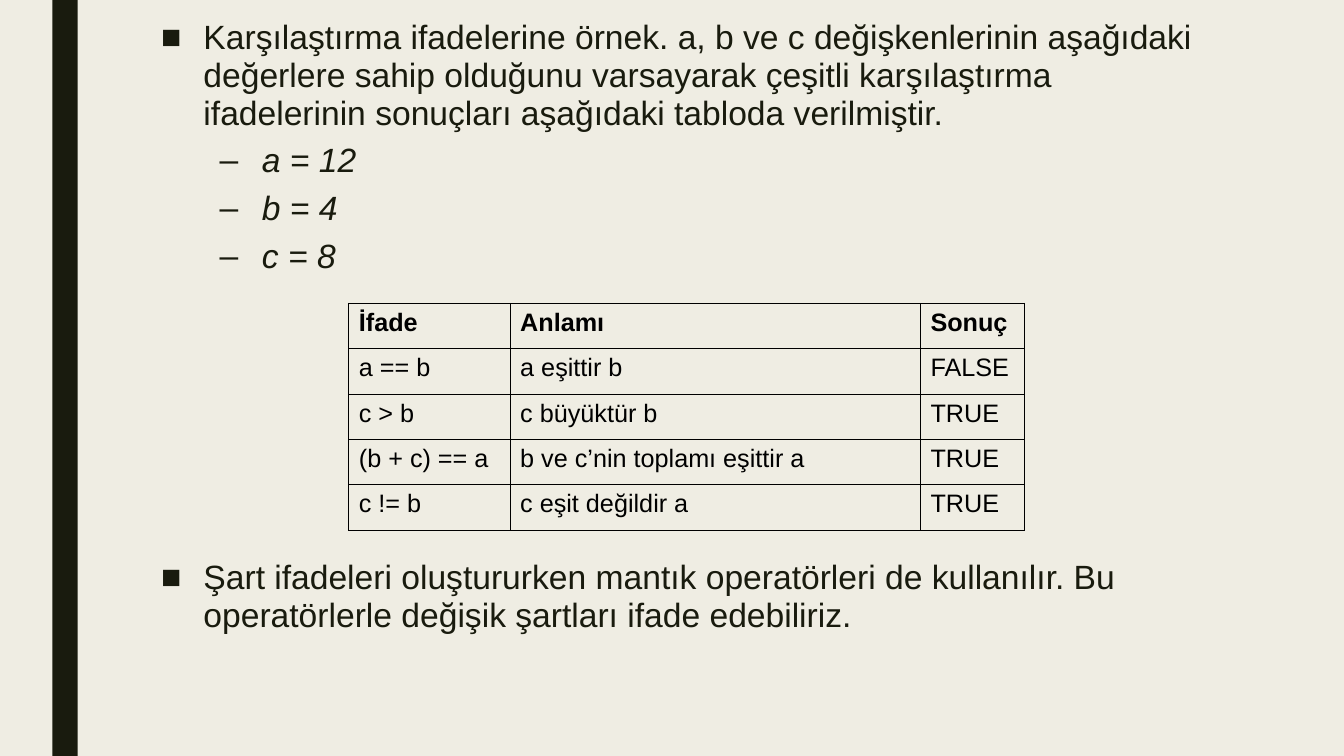
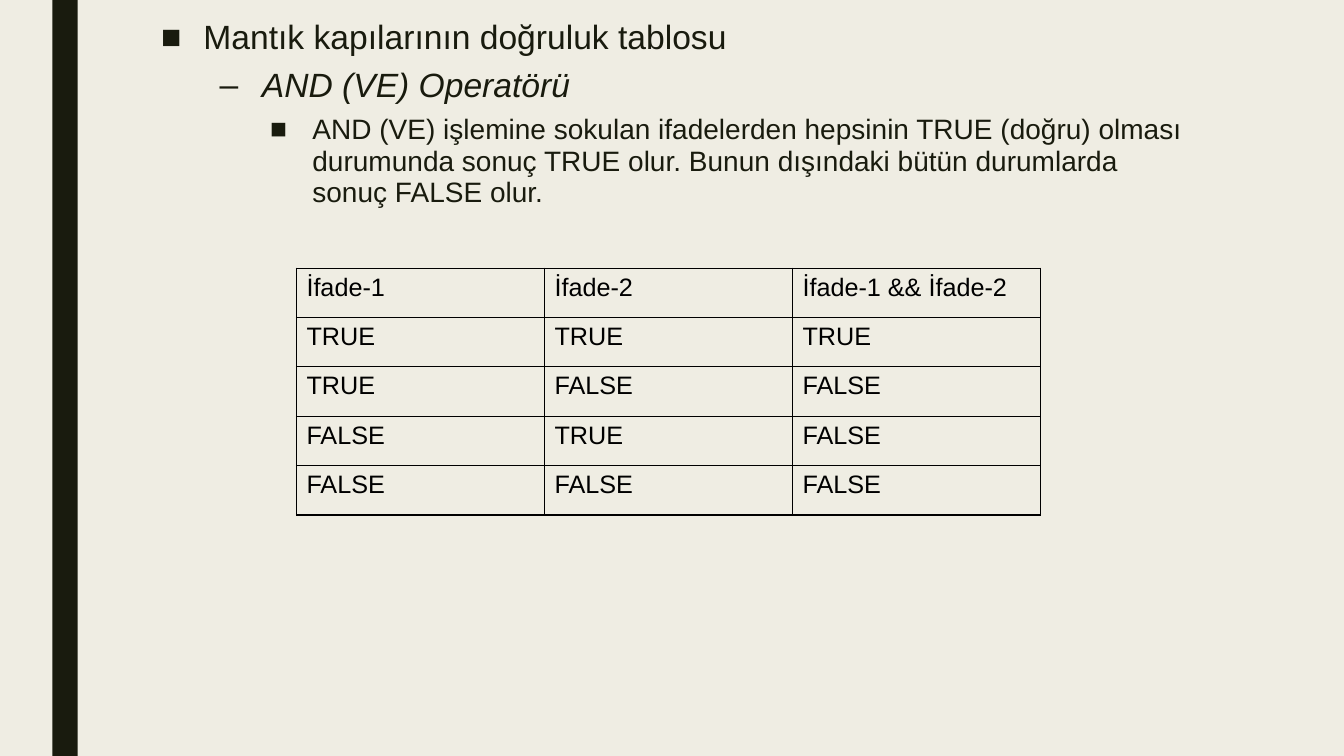
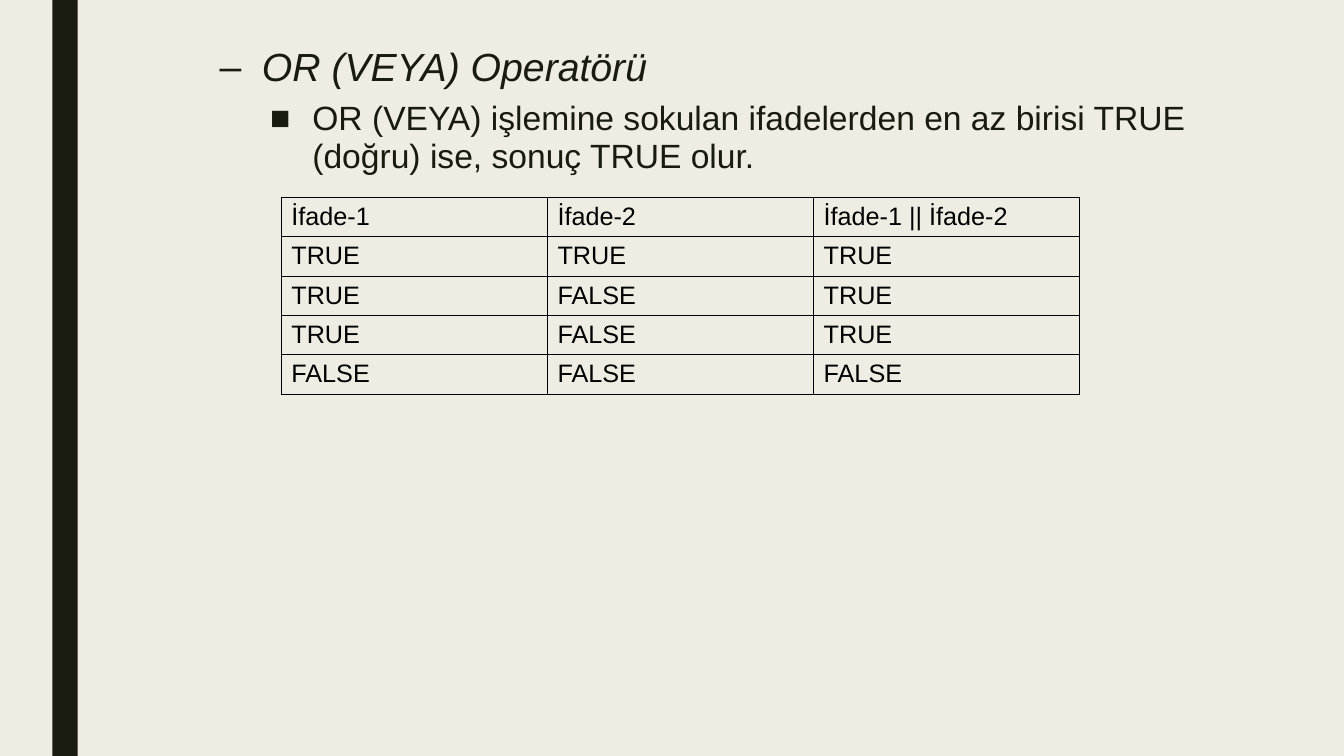
import pptx
import pptx.dml.color
import pptx.enum.shapes
import pptx.oxml
import pptx.oxml.ns
import pptx.util
from pptx.util import Inches

INK = "191B0E"
PAPER = "EFEDE3"
BLACK = "000000"
FONT = "Arial"
LEVELS = [(0.42, 10, "■", False), (1, 5, "–", True), (1.5, 5, "■", False)]


def rgb(value):
    return pptx.dml.color.RGBColor.from_string(value)


def element(xml):
    return pptx.oxml.parse_xml(xml.replace(" ", " " + pptx.oxml.ns.nsdecls("a") + " ", 1))


class Deck:
    def __init__(self):
        self.prs = pptx.Presentation()
        self.prs.slide_width = Inches(13.33)
        self.prs.slide_height = Inches(7.5)
        fill = self.prs.slide_master.background.fill
        fill.solid()
        fill.fore_color.rgb = rgb(PAPER)

    def slide(self):
        self.s = self.prs.slides.add_slide(self.prs.slide_layouts[6])
        band = self.s.shapes.add_shape(
            pptx.enum.shapes.MSO_SHAPE.RECTANGLE,
            Inches(0.52), 0, Inches(0.25), self.prs.slide_height)
        band.shadow.inherit = False
        band.fill.solid()
        band.fill.fore_color.rgb = rgb(INK)
        band.line.fill.background()

    def run(self, p, text, size, color, bold=False, italic=False):
        r = p.add_run()
        r.text = text
        r.font.name = FONT
        r.font.size = pptx.util.Pt(size)
        r.font.color.rgb = rgb(color)
        r.font.bold = bold
        r.font.italic = italic

    def bullets(self, top, height, items):
        sp = self.s.shapes.add_textbox(Inches(1.5), Inches(top), Inches(10.5), Inches(height))
        tf = sp.text_frame
        tf.word_wrap = True
        for i, (level, size, text) in enumerate(items):
            p = tf.add_paragraph() if i else tf.paragraphs[0]
            indent, before, mark, italic = LEVELS[level]
            p.level = level
            p.line_spacing = 0.94
            p.space_before = pptx.util.Pt(before)
            p.space_after = pptx.util.Pt(2)
            pPr = p._p.get_or_add_pPr()
            pPr.set("marL", str(Inches(indent)))
            pPr.set("indent", str(Inches(-0.42)))
            pPr.append(element(f'<a:buFont typeface="{FONT}"/>'))
            pPr.append(element(f'<a:buChar char="{mark}"/>'))
            self.run(p, text, size, INK, italic=italic)

    def border(self, cell):
        tcPr = cell._tc.get_or_add_tcPr()
        for i, side in enumerate("LRTB"):
            tcPr.insert(i, element(
                f'<a:ln{side} w="12700"><a:solidFill><a:srgbClr val="{BLACK}"/>'
                f'</a:solidFill></a:ln{side}>'))

    def table(self, left, top, widths, row_height, rows, bold_header=False):
        table = self.s.shapes.add_table(
            len(rows), len(widths), Inches(left), Inches(top),
            Inches(sum(widths)), Inches(row_height * len(rows))).table
        table.first_row = False
        table.horz_banding = False
        for column, width in zip(table.columns, widths):
            column.width = Inches(width)
        for i, row in enumerate(rows):
            table.rows[i].height = Inches(row_height)
            for j, text in enumerate(row):
                cell = table.cell(i, j)
                cell.margin_bottom = Inches(0.04)
                cell.fill.background()
                self.border(cell)
                self.run(cell.text_frame.paragraphs[0], text, 18, BLACK,
                         bold=bold_header and i == 0)


def main():
    deck = Deck()

    deck.slide()
    deck.bullets(0.14, 2.7, [
        (0, 24, "Karşılaştırma ifadelerine örnek. a, b ve c değişkenlerinin aşağıdaki "
                "değerlere sahip olduğunu varsayarak çeşitli karşılaştırma ifadelerinin "
                "sonuçları aşağıdaki tabloda verilmiştir."),
        (1, 24, "a = 12"),
        (1, 24, "b = 4"),
        (1, 24, "c = 8"),
    ])
    deck.table(3.46, 3.01, [1.6, 4.07, 1.03], 0.45, [
        ("İfade", "Anlamı", "Sonuç"),
        ("a == b", "a eşittir b", "FALSE"),
        ("c > b", "c büyüktür b", "TRUE"),
        ("(b + c) == a", "b ve c’nin toplamı eşittir a", "TRUE"),
        ("c != b", "c eşit değildir a", "TRUE"),
    ], bold_header=True)
    deck.bullets(5.5, 0.9, [
        (0, 24, "Şart ifadeleri oluştururken mantık operatörleri de kullanılır. Bu "
                "operatörlerle değişik şartları ifade edebiliriz."),
    ])

    deck.slide()
    deck.bullets(0.14, 6.28, [
        (0, 24, "Mantık kapılarının doğruluk tablosu"),
        (1, 24, "AND (VE) Operatörü"),
        (2, 20, "AND (VE) işlemine sokulan ifadelerden hepsinin TRUE (doğru) olması "
                "durumunda sonuç TRUE olur. Bunun dışındaki bütün durumlarda sonuç "
                "FALSE olur."),
    ])
    deck.table(2.94, 2.66, [2.46] * 3, 0.49, [
        ("İfade-1", "İfade-2", "İfade-1 && İfade-2"),
        ("TRUE", "TRUE", "TRUE"),
        ("TRUE", "FALSE", "FALSE"),
        ("FALSE", "TRUE", "FALSE"),
        ("FALSE", "FALSE", "FALSE"),
    ])

    deck.slide()
    deck.bullets(0.41, 6.01, [
        (1, 28, "OR (VEYA) Operatörü"),
        (2, 24, "OR (VEYA) işlemine sokulan ifadelerden en az birisi TRUE (doğru) ise, "
                "sonuç TRUE olur."),
    ])
    deck.table(2.79, 1.96, [2.64] * 3, 0.38, [
        ("İfade-1", "İfade-2", "İfade-1 || İfade-2"),
        ("TRUE", "TRUE", "TRUE"),
        ("TRUE", "FALSE", "TRUE"),
        ("TRUE", "FALSE", "TRUE"),
        ("FALSE", "FALSE", "FALSE"),
    ])

    deck.prs.save("out.pptx")


if __name__ == "__main__":
    main()
